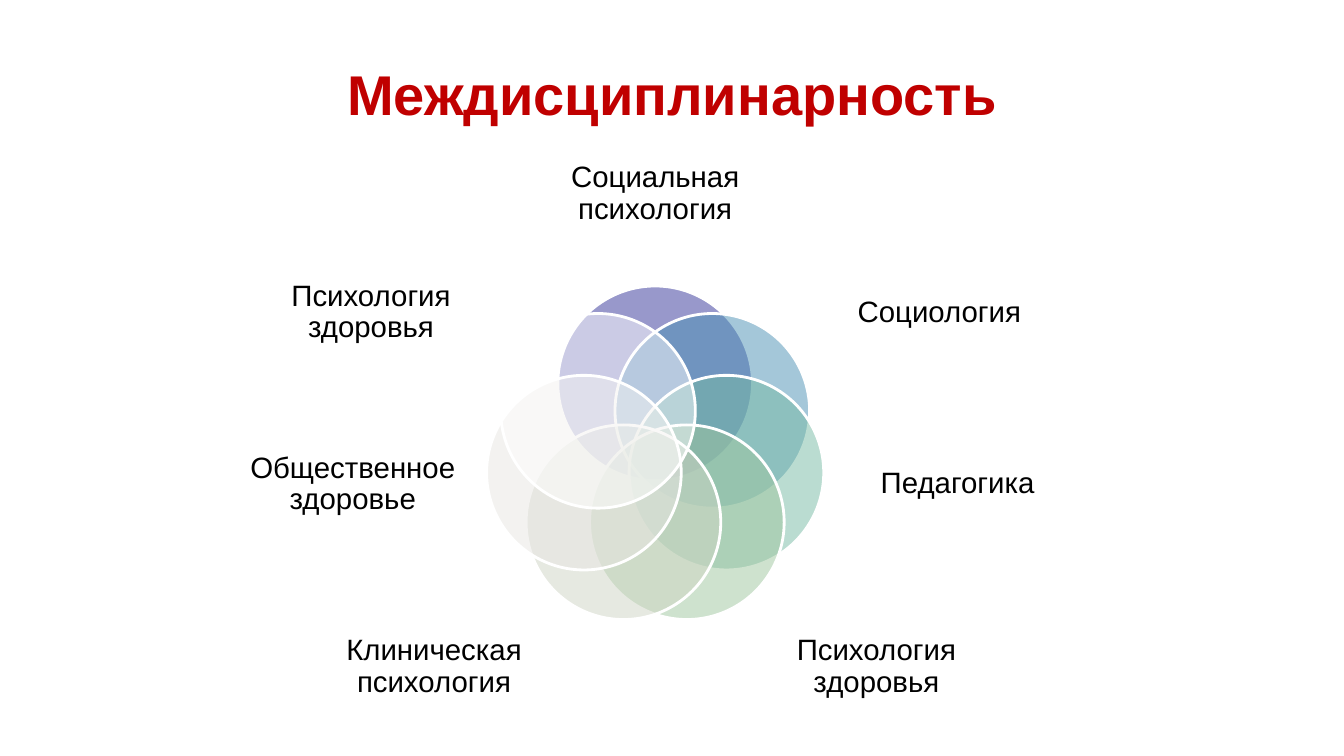
from math import cos, pi, sin

from lxml import etree
from pptx import Presentation
from pptx.dml.color import RGBColor
from pptx.enum.shapes import MSO_SHAPE
from pptx.enum.text import MSO_ANCHOR, PP_ALIGN
from pptx.oxml.ns import qn
from pptx.util import Pt

OVAL = MSO_SHAPE.OVAL
MIDDLE = MSO_ANCHOR.MIDDLE
CENTER = PP_ALIGN.CENTER

THEME = {
    "font": "Arial",
    "title": {"size": Pt(40), "bold": True, "color": "C00000"},
    "label": {"size": Pt(21), "bold": False, "color": "000000"},
    "edge": "FFFFFF",
    "alpha": 50,
}

# Ring of circles: middle, radius of the ring, size of a circle
MID_X, MID_Y = 468, 326
RING, SIZE = 52.2, 139

# Label rows: distance from the middle, top, width, height
TOP = (0, 96, 159, 85.5)
HIGH = (203, 176.5, 150.5, 93.5)
SIDE = (216, 296, 147.5, 100)
LOW = (158, 430.5, 159, 91.5)

# Clockwise from the top: text, colour, side, row
FIELDS = [
    ("Социальная психология", "333399", 1, TOP),
    ("Социология", "4A91B5", 1, HIGH),
    ("Педагогика", "77BBA4", 1, SIDE),
    ("Психология здоровья", "9FC69F", 1, LOW),
    ("Клиническая психология", "CFD5C4", -1, LOW),
    ("Общественное здоровье", "E8E6E3", -1, SIDE),
    ("Психология здоровья", "FFFFFF", -1, HIGH),
]


def apply(target, values):
    for name, value in values.items():
        setattr(target, name, value)


class Canvas:
    def __init__(self, slide, theme):
        self.slide = slide
        self.theme = theme

    def text(self, shapes, words, box, style, frame=None, para=None):
        item = shapes.add_textbox(*map(Pt, box))
        body = item.text_frame
        apply(body, {"word_wrap": True, "vertical_anchor": MIDDLE, **(frame or {})})
        line = body.paragraphs[0]
        apply(line, {"alignment": CENTER, **(para or {})})
        run = line.add_run()
        run.text = words
        look = self.theme[style]
        apply(run.font, {"name": self.theme["font"], "size": look["size"],
                         "bold": look["bold"]})
        run.font.color.rgb = RGBColor.from_string(look["color"])

    def title(self, words, box):
        self.text(self.slide.shapes, words, box, "title")

    def label(self, shapes, words, box):
        sides = ("left", "top", "right", "bottom")
        frame = {f"margin_{side}": 0 for side in sides}
        para = {"line_spacing": 0.9, "space_after": Pt(7)}
        self.text(shapes, words, box, "label", frame, para)

    def circle(self, shapes, x, y, size, color):
        box = (x - size / 2, y - size / 2, size, size)
        item = shapes.add_shape(OVAL, *map(Pt, box))
        item.shadow.inherit = False
        item.fill.solid()
        item.fill.fore_color.rgb = RGBColor.from_string(color)
        item.line.color.rgb = RGBColor.from_string(self.theme["edge"])
        item.line.width = Pt(2)
        # Transparency of the fill
        tint = item.fill._xPr.find(qn("a:solidFill"))[0]
        alpha = etree.SubElement(tint, qn("a:alpha"))
        alpha.set("val", str(self.theme["alpha"] * 1000))


def main():
    deck = Presentation()
    apply(deck, {"slide_width": Pt(960), "slide_height": Pt(540)})
    slide = deck.slides.add_slide(deck.slide_layouts[6])
    canvas = Canvas(slide, THEME)

    # Heading
    canvas.title("Междисциплинарность", (48, 21.6, 864, 90))

    # Overlapping circles with their labels
    venn = slide.shapes.add_group_shape().shapes
    for i, (words, color, side, (dist, top, width, height)) in enumerate(FIELDS):
        turn = 2 * pi * i / len(FIELDS)
        canvas.circle(venn, MID_X + RING * sin(turn), MID_Y - RING * cos(turn),
                      SIZE, color)
        left = MID_X + side * dist - width / 2
        canvas.label(venn, words, (left, top, width, height))

    deck.save("out.pptx")


if __name__ == "__main__":
    main()
